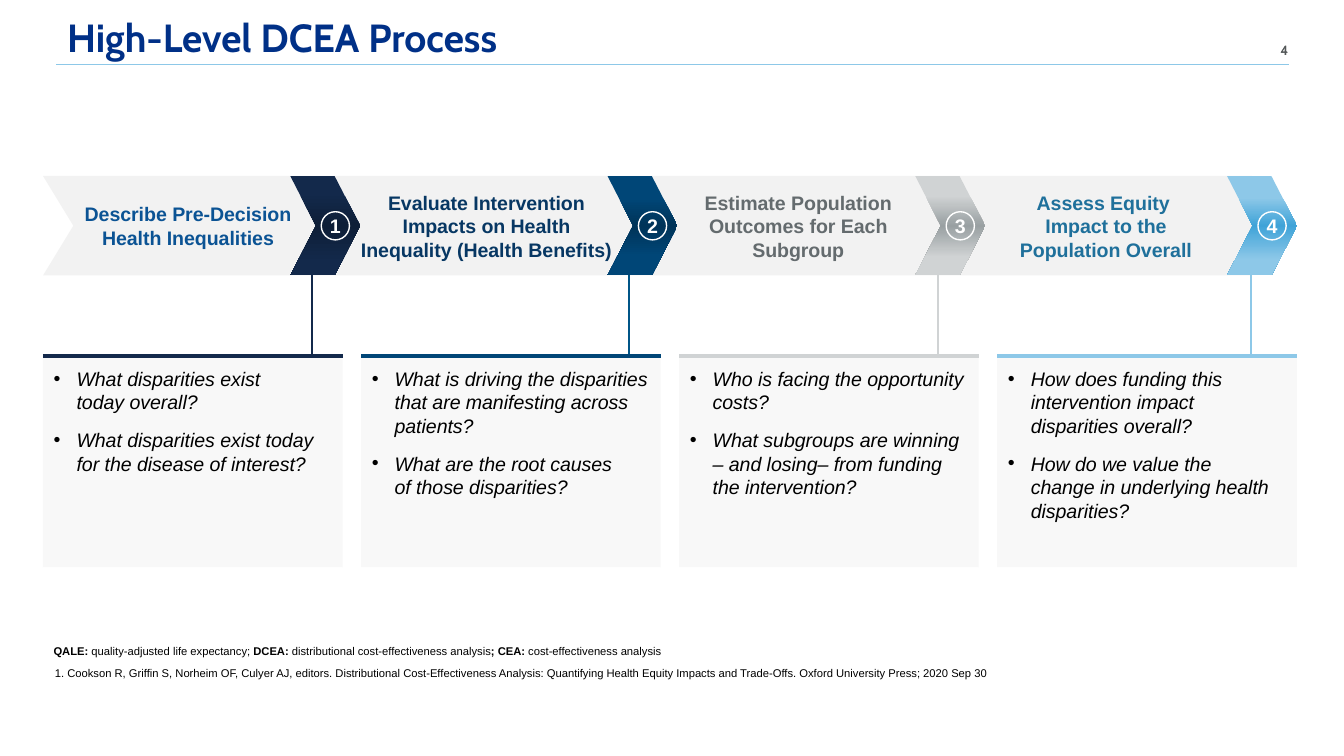
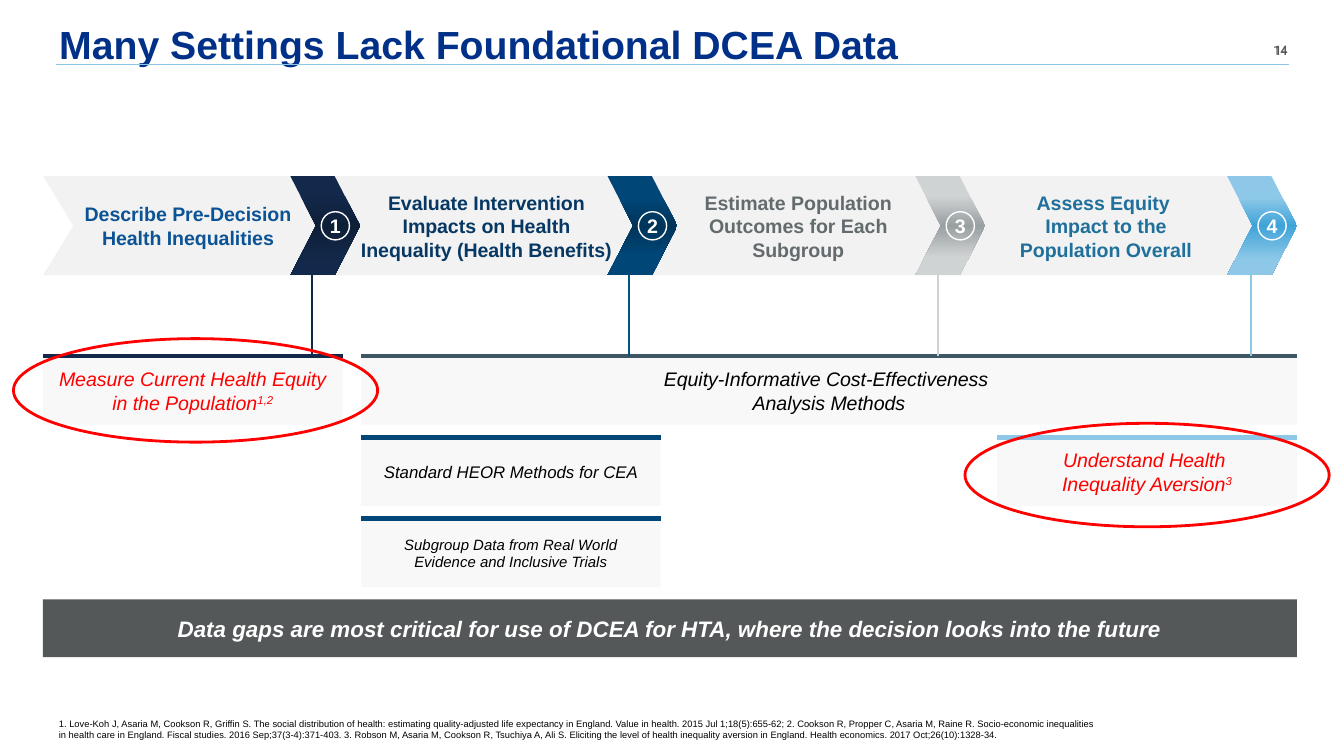
"""Build two slides on the four-step DCEA process."""
from dataclasses import dataclass

from lxml.etree import SubElement
from pptx import Presentation
from pptx.dml.color import RGBColor
from pptx.enum.shapes import MSO_CONNECTOR, MSO_SHAPE
from pptx.enum.text import MSO_ANCHOR as ANCHOR, PP_ALIGN as ALIGN
from pptx.oxml.ns import qn
from pptx.util import Inches, Pt

COLORS = {
    "title": "003087", "rule": "8DC8E8", "gray": "545859", "black": "000000",
    "white": "FFFFFF", "red": "FF0000", "band": "F2F2F2",
    "navy": "13294B", "navy_mid": "0E1F38", "navy_text": "0B5394",
    "blue": "004677", "blue_mid": "003459", "blue_text": "073763", "blue_stem": "005587",
    "silver": "D0D3D4", "silver_mid": "99A0A2", "silver_text": "646B6E",
    "sky": "8DC8E8", "sky_mid": "3FA3D8", "sky_text": "1F709B", "slate": "3F5765",
}
LEFT, RIGHT = 0.32, 9.65
COL_W = 2.23
COL_PITCH = (RIGHT - LEFT - COL_W) / 3
BAND_TOP, BAND_H = 1.31, 0.74
BAND_MID = BAND_TOP + BAND_H / 2
CHEVRON_W = 0.52
BADGE = 0.21
HEADING_H = 0.53
PANEL_TOP, PANEL_H = 2.65, 0.51
ROW_PITCH = (3.86 - PANEL_TOP) / 2
PANEL_INSET, BULLET_INDENT = 0.08, 0.17
GAP_CIRCLES = [(0.1, 2.52), (7.18, 3.15)]


@dataclass
class Step:
    heading: str
    heading_x: float
    heading_w: float
    chevron_x: float
    stem_x: float
    tone: str
    stem: str
    stops: tuple[int, int, int]
    questions: tuple[str, ...]


@dataclass
class Panel:
    text: str
    col: int
    row: int
    cap: str
    span: int = 1
    size: float = 10.5
    refs: str = ""


STEPS = [
    Step("Describe Pre-Decision Health Inequalities", 0.6, 1.6, 2.16, 2.32,
         "navy", "navy", (17, 50, 87),
         ("What disparities exist \vtoday overall?",
          "What disparities exist today for the disease of interest?")),
    Step("Evaluate Intervention Impacts on Health Inequality (Health Benefits)",
         2.68, 1.88, 4.52, 4.68, "blue", "blue_stem", (22, 50, 80),
         ("What is driving the disparities that are manifesting across patients?",
          "What are the root causes \vof those disparities?")),
    Step("Estimate Population Outcomes for Each Subgroup", 5.1, 1.68, 6.81, 6.98,
         "silver", "silver", (20, 50, 82),
         ("Who is facing the opportunity costs?",
          "What subgroups are winning – and losing– from funding the intervention?")),
    Step("Assess Equity \vImpact to the Population Overall", 7.43, 1.6, 9.13, 9.31,
         "sky", "sky", (22, 50, 84),
         ("How does funding this intervention impact disparities overall?",
          "How do we value the \vchange in underlying health disparities?")),
]
PANELS = [
    Panel("Measure Current Health Equity in the Population", 0, 0, "navy", refs="1,2"),
    Panel("Equity-Informative Cost-Effectiveness \vAnalysis Methods", 1, 0, "slate", span=3),
    Panel("Standard HEOR Methods for CEA", 1, 1, "blue", size=9),
    Panel("Subgroup Data from Real World Evidence and Inclusive Trials", 1, 2, "blue", size=8),
    Panel("Understand Health \vInequality Aversion", 3, 1, "sky", refs="3"),
]
ABBREVIATIONS = [
    ("QALE: ", True), ("quality-adjusted life expectancy; ", False),
    ("DCEA: ", True), ("distributional cost-effectiveness analysis", False),
    ("; CEA: ", True), ("cost-effectiveness analysis", False),
]
BOOK = ("1. Cookson R, Griffin S, Norheim OF, Culyer AJ, editors. Distributional "
        "Cost-Effectiveness Analysis: Quantifying Health Equity Impacts and Trade-Offs. "
        "Oxford University Press; 2020 Sep 30")
ARTICLES = ("1. Love-Koh J, Asaria M, Cookson R, Griffin S. The social distribution of health: "
            "estimating quality-adjusted life expectancy in England. Value in health. 2015 Jul "
            "1;18(5):655-62; 2. Cookson R, Propper C, Asaria M, Raine R. Socio‐economic "
            "inequalities in health care in England. Fiscal studies. 2016 Sep;37(3-4):371-403. "
            "3. Robson M, Asaria M, Cookson R, Tsuchiya A, Ali S. Eliciting the level of health "
            "inequality aversion in England. Health economics. 2017 Oct;26(10):1328-34.")


def rgb(name: str) -> RGBColor:
    return RGBColor.from_string(COLORS[name])


def col_x(col: int) -> float:
    return LEFT + col * COL_PITCH


def row_y(row: int) -> float:
    return PANEL_TOP + row * ROW_PITCH


def box(x: float, y: float, w: float, h: float) -> list:
    return [Inches(v) for v in (x, y, w, h)]


def style(p, size: float, color: str, font: str = "Arial", bold: bool = False,
          italic: bool = False, align=ALIGN.LEFT) -> None:
    p.alignment = align
    for r in p.runs:
        r.font.name, r.font.size = font, Pt(size)
        r.font.bold, r.font.italic = bold, italic
        r.font.color.rgb = rgb(color)


def set_frame(tf, anchor, inset: float | None = None) -> None:
    tf.word_wrap = True
    tf.vertical_anchor = anchor
    if inset is not None:
        tf.margin_left = tf.margin_right = tf.margin_top = tf.margin_bottom = Inches(inset)


def add_text(slide, at: list, text: str, anchor=ANCHOR.BOTTOM, inset: float | None = None, **kw):
    tf = slide.shapes.add_textbox(*at).text_frame
    set_frame(tf, anchor, inset)
    p = tf.paragraphs[0]
    p.text = text
    style(p, **kw)
    return p


def add_shape(slide, kind, at: list, fill: str | None = None, line: str | None = None,
              weight: float = 1, alpha: int | None = None):
    sp = slide.shapes.add_shape(kind, *at)
    sp.shadow.inherit = False
    if fill:
        sp.fill.solid()
        sp.fill.fore_color.rgb = rgb(fill)
    else:
        sp.fill.background()
    if alpha:
        clr = sp._element.spPr.find(".//" + qn("a:srgbClr"))
        SubElement(clr, qn("a:alpha"), val=str(alpha * 1000))
    if line:
        sp.line.color.rgb = rgb(line)
        sp.line.width = Pt(weight)
    else:
        sp.line.fill.background()
    return sp


def add_line(slide, x1: float, y1: float, x2: float, y2: float, color: str,
             weight: float = 1) -> None:
    cx = slide.shapes.add_connector(MSO_CONNECTOR.STRAIGHT, *box(x1, y1, x2, y2))
    cx.line.color.rgb = rgb(color)
    cx.line.width = Pt(weight)
    SubElement(cx._element.spPr, qn("a:effectLst"))


def set_gradient(sp, step: Step) -> None:
    sp.fill.gradient()
    sp.fill.gradient_angle = 270
    stops = sp._element.spPr.find(".//" + qn("a:gsLst"))
    for gs in list(stops):
        stops.remove(gs)
    for pos, name in zip(step.stops, (step.tone, step.tone + "_mid", step.tone)):
        gs = SubElement(stops, qn("a:gs"), pos=str(pos * 1000))
        SubElement(gs, qn("a:srgbClr"), val=COLORS[name])


def set_bullet(p) -> None:
    pPr = p._p.get_or_add_pPr()
    pPr.set("marL", str(Inches(BULLET_INDENT)))
    pPr.set("indent", str(-Inches(BULLET_INDENT)))
    clr = SubElement(pPr, qn("a:buClr"))
    SubElement(clr, qn("a:srgbClr"), val=COLORS["black"])
    SubElement(pPr, qn("a:buFont"), typeface="Arial")
    SubElement(pPr, qn("a:buChar"), char="•")


def add_base(prs, title: str, number: int, x: float, y: float, font: str):
    slide = prs.slides.add_slide(prs.slide_layouts[5])
    for number_font in ("Roboto", "Cabin"):
        add_text(slide, box(9.27, 0.27, 0.41, 0.18), str(number), ANCHOR.TOP,
                 size=7, color="gray", font=number_font, align=ALIGN.RIGHT)
    add_line(slide, 0.42, 0.48, 9.59, 0.48, "rule")
    sp = slide.shapes.title
    sp.left, sp.top, sp.width, sp.height = box(x, y, 9.3, 0.63)
    set_frame(sp.text_frame, ANCHOR.MIDDLE)
    p = sp.text_frame.paragraphs[0]
    p.text = title
    p.line_spacing = 0.9
    style(p, 21, "title", font, bold=True)
    return slide


def add_process(slide) -> None:
    band = add_shape(slide, MSO_SHAPE.CHEVRON, box(LEFT, BAND_TOP, 9.22, BAND_H), "band")
    band.adjustments[0] = 0.305
    for number, step in enumerate(STEPS, 1):
        chevron = add_shape(slide, MSO_SHAPE.CHEVRON,
                            box(step.chevron_x, BAND_TOP, CHEVRON_W, BAND_H))
        chevron.adjustments[0] = 0.366
        set_gradient(chevron, step)
        add_text(slide, box(step.heading_x, BAND_MID - HEADING_H / 2, step.heading_w, HEADING_H),
                 step.heading, ANCHOR.MIDDLE, 0, size=10.5, color=step.tone + "_text",
                 bold=True, align=ALIGN.CENTER)
        badge = add_shape(slide, MSO_SHAPE.OVAL,
                          box(step.chevron_x + 0.23, BAND_MID - BADGE / 2, BADGE, BADGE),
                          line="white", weight=0.75)
        set_frame(badge.text_frame, ANCHOR.MIDDLE, 0)
        badge.text_frame.text = str(number)
        style(badge.text_frame.paragraphs[0], 10.5, "white", bold=True, align=ALIGN.CENTER)
        add_line(slide, step.stem_x, BAND_TOP + BAND_H, step.stem_x, PANEL_TOP, step.stem)


def add_panel(slide, x: float, y: float, w: float, h: float, cap: str, anchor):
    sp = add_shape(slide, MSO_SHAPE.RECTANGLE, box(x, y, w, h), "band", alpha=50)
    set_frame(sp.text_frame, anchor, PANEL_INSET)
    add_line(slide, x, y, x + w, y, cap, 2.5)
    return sp.text_frame


def add_questions(slide, col: int, step: Step) -> None:
    tf = add_panel(slide, col_x(col), PANEL_TOP, COL_W, 1.57, step.tone, ANCHOR.TOP)
    for i, question in enumerate(step.questions):
        p = tf.add_paragraph() if i else tf.paragraphs[0]
        p.text = question
        set_bullet(p)
        p.space_before, p.space_after = Pt(3.8 if i else 0), Pt(3.8)
        style(p, 10.5, "black", italic=True)


def add_method(slide, panel: Panel) -> None:
    width = COL_W + (panel.span - 1) * COL_PITCH
    tf = add_panel(slide, col_x(panel.col), row_y(panel.row), width, PANEL_H,
                   panel.cap, ANCHOR.MIDDLE)
    p = tf.paragraphs[0]
    p.text = panel.text
    if panel.refs:
        r = p.add_run()
        r.text = panel.refs
        r._r.get_or_add_rPr().set("baseline", "30000")
    style(p, panel.size, "red" if panel.refs else "black", italic=True, align=ALIGN.CENTER)


def build_process_slide(prs) -> None:
    slide = add_base(prs, "High-Level DCEA Process", 4, 0.4, -0.02, "Cabin")
    add_text(slide, box(0.31, 4.91, 9.48, 0.2), BOOK, size=6, color="black")
    p = add_text(slide, box(0.3, 4.74, 9.48, 0.2), "", size=6, color="black")
    for text, _ in ABBREVIATIONS:
        p.add_run().text = text
    style(p, 6, "black")
    for r, (_, bold) in zip(p.runs, ABBREVIATIONS):
        r.font.bold = bold
    add_process(slide)
    for col, step in enumerate(STEPS):
        add_questions(slide, col, step)


def build_data_slide(prs) -> None:
    slide = add_base(prs, "Many Settings Lack Foundational DCEA Data", 14, 0.34, 0.03, "Arial")
    for panel in PANELS:
        add_method(slide, panel)
    add_text(slide, box(0.34, 5.29, 8, 0.27), ARTICLES, size=5, color="black")
    message = add_shape(slide, MSO_SHAPE.RECTANGLE, box(LEFT, 4.46, RIGHT - LEFT, 0.43), "gray")
    set_frame(message.text_frame, ANCHOR.MIDDLE)
    message.text_frame.text = ("Data gaps are most critical for use of DCEA for HTA, "
                               "where the decision looks into the future")
    style(message.text_frame.paragraphs[0], 12, "white", bold=True, italic=True,
          align=ALIGN.CENTER)
    add_process(slide)
    for x, y in GAP_CIRCLES:
        add_shape(slide, MSO_SHAPE.OVAL, box(x, y, 2.71, 0.77), line="red", weight=1.5)


def main() -> None:
    prs = Presentation()
    prs.slide_width, prs.slide_height = Inches(10), Inches(10 * 9 / 16)
    build_process_slide(prs)
    build_data_slide(prs)
    prs.save("out.pptx")


if __name__ == "__main__":
    main()
